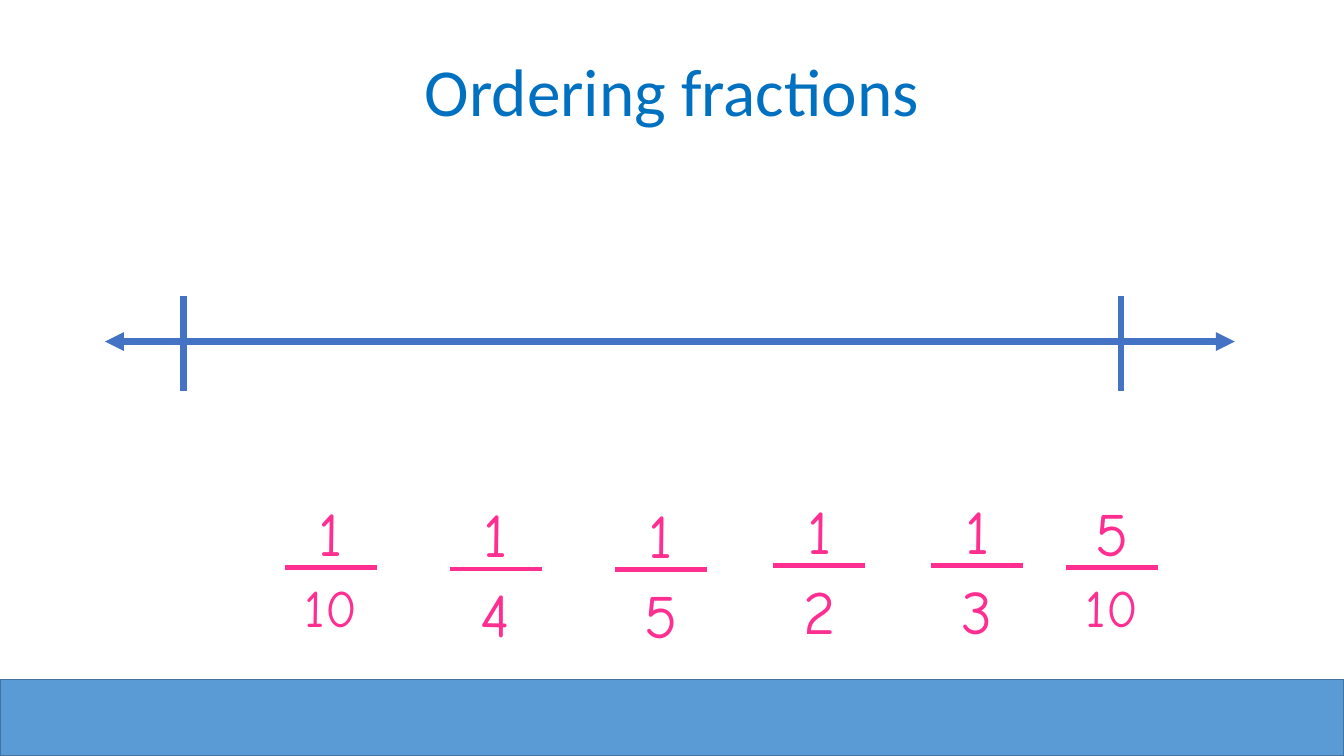
from lxml.etree import SubElement
from pptx import Presentation
from pptx.dml.color import RGBColor
from pptx.enum.shapes import MSO_CONNECTOR, MSO_SHAPE
from pptx.enum.text import PP_ALIGN
from pptx.oxml.ns import qn
from pptx.util import Pt

TITLE = RGBColor(0x00, 0x70, 0xC0)
AXIS = RGBColor(0x44, 0x72, 0xC4)
PINK = RGBColor(0xFF, 0x2F, 0x92)
BAND = RGBColor(0x5B, 0x9B, 0xD5)
EDGE = RGBColor(0x43, 0x73, 0x9E)

WIDTH, HEIGHT = 960, 540
BAR = 65.8  # width of a fraction bar

# left, top, numerator, denominator
FRACTIONS = [
    (203.6, 350, "1", "10"),
    (321.3, 350.8, "1", "4"),
    (439.3, 351.4, "1", "5"),
    (552.3, 348.5, "1", "2"),
    (665.2, 348.5, "1", "3"),
    (761.6, 350, "5", "10"),
]


def add_text(shapes, box, text, font, size, color):
    shape = shapes.add_textbox(*map(Pt, box))
    shape.text_frame.word_wrap = True
    para = shape.text_frame.paragraphs[0]
    para.text = text
    para.alignment = PP_ALIGN.CENTER
    para.font.name = font
    para.font.size = Pt(size)
    para.font.color.rgb = color
    return para


def add_line(shapes, start, end, color, weight, arrows=False):
    line = shapes.add_connector(
        MSO_CONNECTOR.STRAIGHT, *map(Pt, (*start, *end)))
    line.line.color.rgb = color
    line.line.width = Pt(weight)
    props = line._element.spPr
    if arrows:
        for end_tag in ("a:headEnd", "a:tailEnd"):
            SubElement(props.find(qn("a:ln")), qn(end_tag), type="triangle")
    SubElement(props, qn("a:effectLst"))


def add_digits(shapes, box, text, size):
    """Add one part of a fraction, with a gap of 20% of a line above it."""
    para = add_text(shapes, box, text, "Comic Neue", size, PINK)
    para.space_before = Pt(0)
    gap = para._p.pPr.find(qn("a:spcBef"))
    gap.remove(gap[0])
    SubElement(gap, qn("a:spcPct"), val="20000")


def add_fraction(slide, left, top, upper, lower):
    shapes = slide.shapes.add_group_shape().shapes
    bar_y = top + 55.4
    add_digits(shapes, (left, top, BAR, 69), upper, 44)
    add_line(shapes, (left, bar_y), (left + BAR, bar_y), PINK, 3)
    size = 44 if len(lower) == 1 else 37.4
    add_digits(shapes, (left + 5, top + 57, BAR - 10, 78.5), lower, size)


def add_band(slide, top):
    band = slide.shapes.add_shape(
        MSO_SHAPE.RECTANGLE, 0, Pt(top), Pt(WIDTH), Pt(HEIGHT - top))
    band.shadow.inherit = False
    band.fill.solid()
    band.fill.fore_color.rgb = BAND
    band.line.color.rgb = EDGE
    band.line.width = Pt(1)


def add_axis(slide):
    """Add the number line with a tick near each end."""
    add_line(slide.shapes, (75, 244), (882, 244), AXIS, 4.5, arrows=True)
    for x in (131, 800.6):
        add_line(slide.shapes, (x, 211.3), (x, 279.4), AXIS, 4.5)


def main():
    deck = Presentation()
    deck.slide_width, deck.slide_height = Pt(WIDTH), Pt(HEIGHT)
    slide = deck.slides.add_slide(deck.slide_layouts[6])
    add_band(slide, 485.5)
    add_text(slide.shapes, (48, 31.7, 864, 65.4), "Ordering fractions",
             "Calibri", 48, TITLE)
    add_axis(slide)
    for fraction in FRACTIONS:
        add_fraction(slide, *fraction)
    deck.save("out.pptx")


if __name__ == "__main__":
    main()
